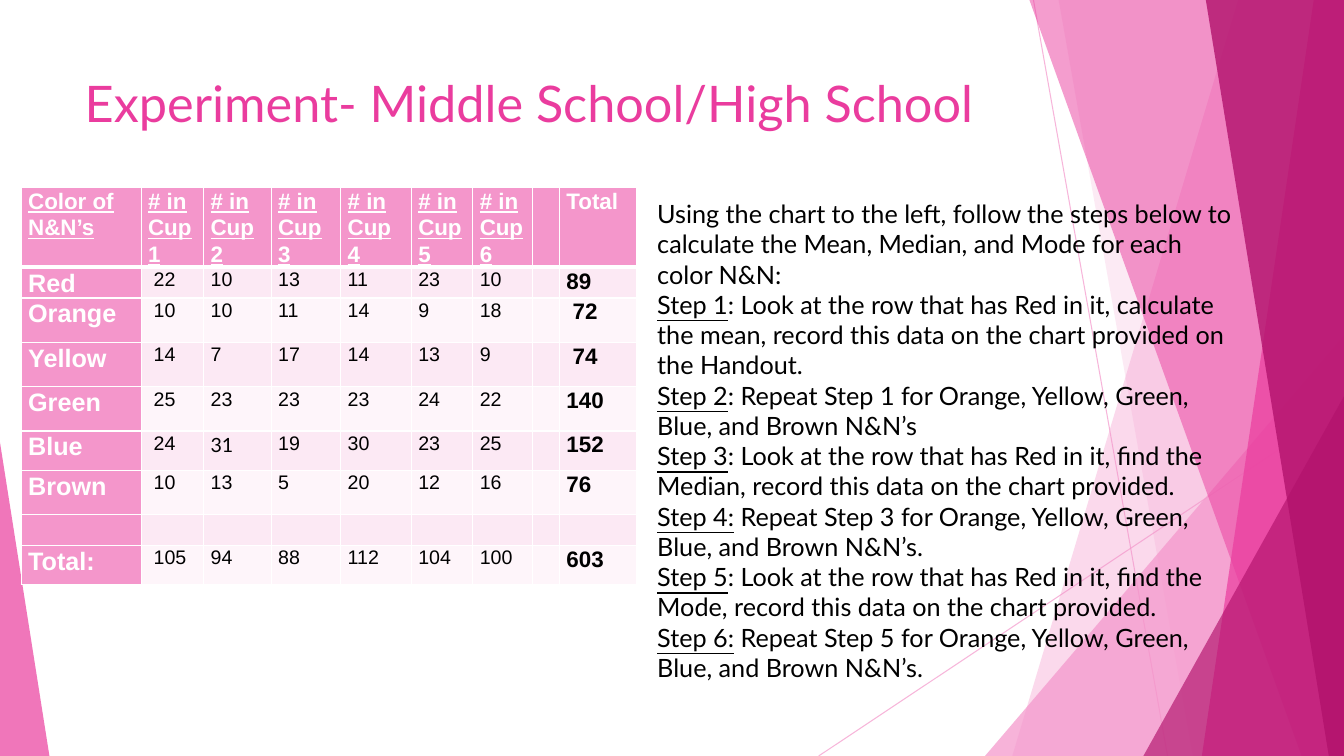
"""Builds a slide with a candy count table and the steps of an averages exercise."""
from dataclasses import dataclass

from lxml import etree
from pptx import Presentation
from pptx import util as u
from pptx.dml.color import RGBColor
from pptx.enum import shapes, text
from pptx.oxml import ns

PINK = RGBColor(0xF4, 0x96, 0xCB)
MAGENTA = RGBColor(0xEA, 0x3C, 0x9E)
PLUM = RGBColor(0xB2, 0x12, 0x6C)
BLUSH = RGBColor(0xFC, 0xE9, 0xF4)
PALE = RGBColor(0xFE, 0xF5, 0xFA)
WHITE = RGBColor(0xFF, 0xFF, 0xFF)
BLACK = RGBColor(0x00, 0x00, 0x00)
WIDTH, HEIGHT = 13.33, 7.5


@dataclass(frozen=True)
class Ray:
    start: tuple[float, float]
    end: tuple[float, float]


@dataclass(frozen=True)
class Band:
    """A full-height facet reaching the right edge."""
    top_x: float
    bottom_x: float
    color: RGBColor
    opacity: int


@dataclass(frozen=True)
class Triangle:
    left: float
    top: float
    width: float
    apex: float
    color: RGBColor
    opacity: int


@dataclass(frozen=True)
class Style:
    size: int
    color: RGBColor = BLACK
    font: str = "Lato"
    bold: bool = False
    underline: bool = False


@dataclass(frozen=True)
class Step:
    label: str
    task: str


RAYS = [Ray((10.25, 0), (11.58, HEIGHT)), Ray((WIDTH, 4.03), (8.12, HEIGHT))]
FACETS = [
    Band(12.28, 10.04, PINK, 36),
    Band(10.5, 11.83, PINK, 20),
    Triangle(9.77, 3.33, 3.56, 1, PINK, 72),
    Band(10.21, 12.91, MAGENTA, 50),
    Band(13.03, 11.92, MAGENTA, 70),
    Band(11.96, 13.18, PLUM, 80),
    Triangle(11.34, 3.93, 1.99, 1, PLUM, 66),
    Triangle(0, 4.39, 0.49, 0, MAGENTA, 70),
]
COLUMN_WIDTHS = [1.19, 0.62, 0.67, 0.69, 0.7, 0.61, 0.59, 0.27, 0.77]
ROW_HEIGHTS = [0.58, 0.22, 0.44, 0.44, 0.44, 0.39, 0.44, 0.22, 0.39]
COUNTS = [
    ["Color of N&N’s", *(f"# in Cup {cup}" for cup in range(1, 7)), "", "Total"],
    ["Red", " 22", "10", "13", "11", "23", "10", "", "89"],
    ["Orange", " 10", "10", "11", "14", "9", "18", "", " 72"],
    ["Yellow", " 14", "7", "17", "14", "13", "9", "", " 74"],
    ["Green", " 25", "23", "23", "23", "24", "22", "", "140 "],
    ["Blue", " 24", "31", "19", "30", "23", "25", "", "152 "],
    ["Brown", " 10", "13", "5", "20", "12", "16", "", "76 "],
    [""] * len(COLUMN_WIDTHS),
    ["Total:", " 105", "94", "88", "112", "104", "100", "", "603 "],
]
LATO_CELL = (5, 2)
OTHERS = "for Orange, Yellow, Green, Blue, and Brown N&N’s"
LOOK = ": Look at the row that has Red in it,"
STEPS = [
    Step("", "Using the chart to the left, follow the steps below to calculate "
         "the Mean, Median, and Mode for each color N&N:"),
    Step("Step 1", f"{LOOK} calculate the mean, record this data on the chart "
         "provided on the Handout."),
    Step("Step 2", f": Repeat Step 1 {OTHERS}"),
    Step("Step 3", f"{LOOK} find the Median, record this data on the chart provided."),
    Step("Step 4:", f" Repeat Step 3 {OTHERS}."),
    Step("Step 5", f"{LOOK} find the Mode, record this data on the chart provided."),
    Step("Step 6:", f" Repeat Step 5 {OTHERS}."),
]


def add_run(para, words: str, style: Style) -> None:
    span = para.add_run()
    span.text = words
    font = span.font
    font.name, font.size = style.font, u.Pt(style.size)
    font.bold, font.underline = style.bold, style.underline
    font.color.rgb = style.color


def set_opacity(element, percent: int) -> None:
    color = next(element.iter(ns.qn("a:srgbClr")))
    etree.SubElement(color, ns.qn("a:alpha"), val=str(percent * 1000))


def add_ray(page, ray: Ray) -> None:
    line = page.shapes.add_connector(
        shapes.MSO_CONNECTOR.STRAIGHT, *map(u.Inches, (*ray.start, *ray.end)))
    line.line.color.rgb = PINK
    line.line.width = u.Pt(0.75)
    properties = line._element.spPr
    set_opacity(properties, 70)
    etree.SubElement(properties, ns.qn("a:effectLst"))


def add_facet(page, facet: Band | Triangle) -> None:
    if isinstance(facet, Band):
        corners = [(facet.top_x, 0), (WIDTH, 0), (WIDTH, HEIGHT), (facet.bottom_x, HEIGHT)]
        points = [(u.Inches(x), u.Inches(y)) for x, y in corners]
        builder = page.shapes.build_freeform(*points[0])
        builder.add_line_segments(points[1:], close=True)
        shape = builder.convert_to_shape()
    else:
        shape = page.shapes.add_shape(
            shapes.MSO_SHAPE.ISOSCELES_TRIANGLE, u.Inches(facet.left), u.Inches(facet.top),
            u.Inches(facet.width), u.Inches(HEIGHT - facet.top))
        shape.adjustments[0] = facet.apex
    shape.shadow.inherit = False
    shape.line.fill.background()
    shape.fill.solid()
    shape.fill.fore_color.rgb = facet.color
    set_opacity(shape._element.spPr, facet.opacity)


def add_title(page) -> None:
    title = page.shapes.title
    title.left, title.top = u.Inches(0.74), u.Inches(0.67)
    title.width, title.height = u.Inches(9.4), u.Inches(1.44)
    frame = title.text_frame
    frame.auto_size = text.MSO_AUTO_SIZE.NONE
    frame.vertical_anchor = text.MSO_ANCHOR.TOP
    para = frame.paragraphs[0]
    para.alignment = text.PP_ALIGN.LEFT
    add_run(para, "Experiment- Middle School/High School", Style(36, MAGENTA))


def cell_style(row: int, column: int) -> Style:
    last = len(COLUMN_WIDTHS) - 1
    if row == 0:
        return Style(16, WHITE, "Arial", bold=True, underline=column < last)
    if column == 0:
        return Style(18, WHITE, "Arial", bold=True)
    if column == last:
        return Style(16, font="Arial", bold=True)
    return Style(14, font="Lato" if (row, column) == LATO_CELL else "Arial")


def add_borders(cell, row: int) -> None:
    thick = {0: "lnB", 1: "lnT"}.get(row)
    for side in ("lnL", "lnR", "lnT", "lnB"):
        width = u.Pt(3 if side == thick else 1)
        line = etree.SubElement(cell._tc.get_or_add_tcPr(), ns.qn(f"a:{side}"), w=str(width))
        fill = etree.SubElement(line, ns.qn("a:solidFill"))
        etree.SubElement(fill, ns.qn("a:srgbClr"), val=str(WHITE))


def add_counts(page) -> None:
    table = page.shapes.add_table(
        len(ROW_HEIGHTS), len(COLUMN_WIDTHS), u.Inches(0.21), u.Inches(1.86),
        u.Inches(sum(COLUMN_WIDTHS)), u.Inches(sum(ROW_HEIGHTS))).table
    for column, width in zip(table.columns, COLUMN_WIDTHS):
        column.width = u.Inches(width)
    for r, height in enumerate(ROW_HEIGHTS):
        table.rows[r].height = u.Inches(height)
        for c, words in enumerate(COUNTS[r]):
            cell = table.cell(r, c)
            cell.margin_left = cell.margin_right = u.Inches(0.07)
            cell.margin_top = cell.margin_bottom = 0
            add_borders(cell, r)
            cell.fill.solid()
            banding = BLUSH if r % 2 else PALE
            cell.fill.fore_color.rgb = PINK if r == 0 or c == 0 else banding
            if words:
                para = cell.text_frame.paragraphs[0]
                para.line_spacing = 1.07
                add_run(para, words, cell_style(r, c))


def add_steps(page) -> None:
    box = page.shapes.add_textbox(*map(u.Inches, (6.42, 1.92, 5.92, 5.55)))
    frame = box.text_frame
    frame.word_wrap = True
    for number, step in enumerate(STEPS):
        para = frame.add_paragraph() if number else frame.paragraphs[0]
        if step.label:
            add_run(para, step.label, Style(18, underline=True))
        add_run(para, step.task, Style(18))


def main() -> None:
    deck = Presentation()
    deck.slide_width, deck.slide_height = u.Inches(WIDTH), u.Inches(HEIGHT)
    page = deck.slides.add_slide(deck.slide_layouts[5])
    for ray in RAYS:
        add_ray(page, ray)
    for facet in FACETS:
        add_facet(page, facet)
    add_title(page)
    add_counts(page)
    add_steps(page)
    deck.save("out.pptx")


if __name__ == "__main__":
    main()
